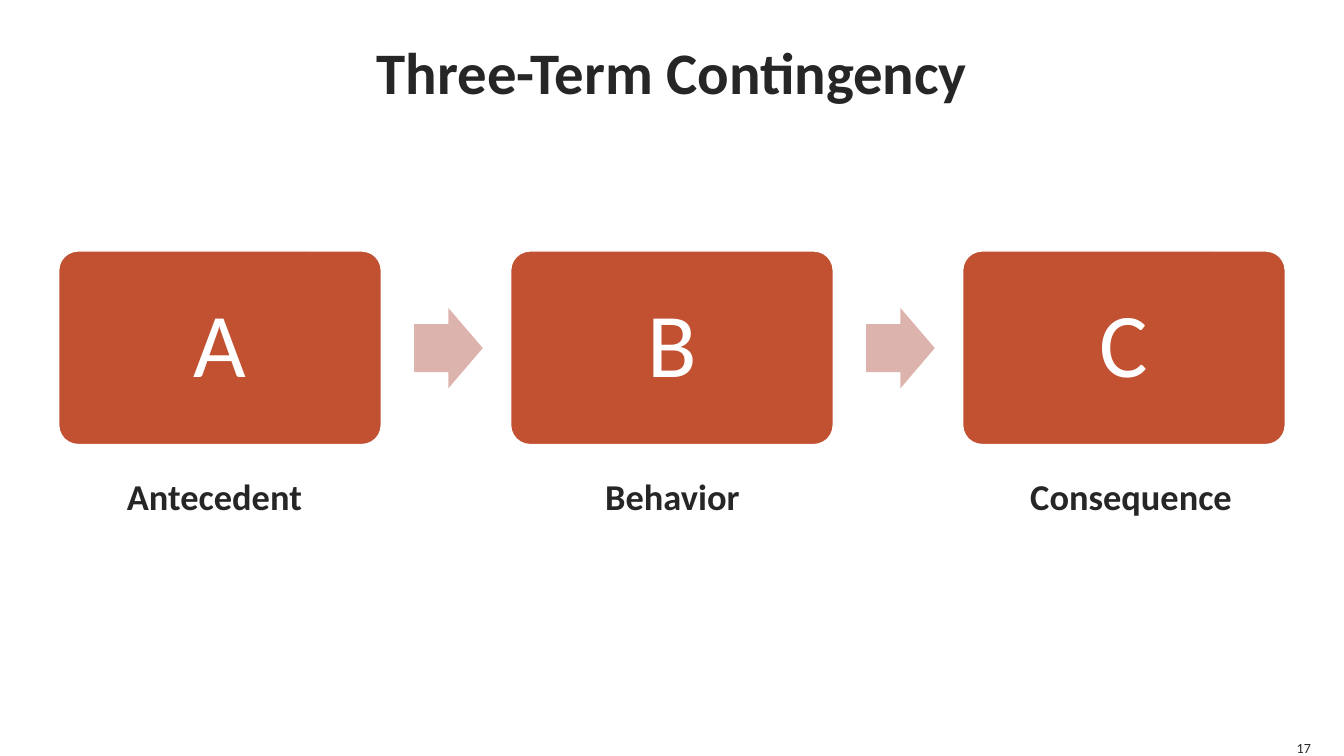
from pptx import Presentation, util as u
from pptx.dml.color import RGBColor
from pptx.enum import shapes, text

RUST = RGBColor(0xC2, 0x51, 0x31)
ROSE = RGBColor(0xDD, 0xB3, 0xAE)
INK = RGBColor(0x26, 0x26, 0x26)
WHITE = RGBColor(0xFF, 0xFF, 0xFF)
LEFT, MID, RIGHT = text.PP_ALIGN.LEFT, text.PP_ALIGN.CENTER, text.PP_ALIGN.RIGHT
TOP, CORE, BASE = (text.MSO_ANCHOR.TOP, text.MSO_ANCHOR.MIDDLE,
                   text.MSO_ANCHOR.BOTTOM)
FLUSH = dict.fromkeys(
    ("margin_left", "margin_top", "margin_right", "margin_bottom"), 0)


def apply(item, style):
    for key, value in style.items():
        setattr(item, key, value)


class Deck:
    """Build slide elements on a grid of 100 columns by 100 rows."""

    def __init__(self, wide, high):
        self.prs = Presentation()
        self.prs.slide_width, self.prs.slide_height = u.Inches(wide), u.Inches(high)
        self.slide = self.prs.slides.add_slide(self.prs.slide_layouts[5])
        self.font = {"name": "Calibri"}

    def area(self, x, y, w, h):
        col, row = self.prs.slide_width / 100, self.prs.slide_height / 100
        return [round(n) for n in (x * col, y * row, w * col, h * row)]

    def letter(self, shape, words, size, color, align=MID, bold=False, **frame):
        body = shape.text_frame
        apply(body, {"auto_size": text.MSO_AUTO_SIZE.NONE, "word_wrap": True,
                     "vertical_anchor": CORE, **frame})
        para = body.paragraphs[0]
        para.alignment = align
        run = para.add_run()
        run.text = words
        apply(run.font, {**self.font, "size": u.Pt(size), "bold": bold})
        run.font.color.rgb = color
        return para

    def title(self, words, *grid):
        shape = self.slide.shapes.title
        apply(shape, dict(zip(("left", "top", "width", "height"), self.area(*grid))))
        self.letter(shape, words, 42, INK, bold=True, **FLUSH)

    def label(self, words, grid, size, **style):
        shape = self.slide.shapes.add_textbox(*self.area(*grid))
        self.letter(shape, words, size, INK, **style)

    def shape(self, kind, grid, fill, ratios):
        shape = self.slide.shapes.add_shape(kind, *self.area(*grid))
        shape.shadow.inherit = False
        shape.fill.solid()
        shape.fill.fore_color.rgb = fill
        shape.line.fill.background()
        for spot, ratio in enumerate(ratios):
            shape.adjustments[spot] = ratio
        return shape

    def card(self, words, *grid):
        shape = self.shape(shapes.MSO_SHAPE.ROUNDED_RECTANGLE, grid, RUST, [0.1])
        shape.line.color.rgb = WHITE
        shape.line.width = u.Pt(1)
        self.letter(shape, words, 65, WHITE).line_spacing = 0.9

    def arrow(self, *grid):
        self.shape(shapes.MSO_SHAPE.RIGHT_ARROW, grid, ROSE, [0.6, 0.5])


def main():
    deck = Deck(13.33, 7.5)
    deck.title("Three-Term Contingency", 3.75, 0, 92.5, 18.67)
    terms = [("Antecedent", 8.7, 16.43, LEFT),
             ("Behavior", 43.44, 13.2, MID),
             ("Consequence", 73.89, 20.56, MID)]
    start, pitch = 4.37, 33.63
    for spot, (term, x, wide, align) in enumerate(terms):
        left = start + spot * pitch
        deck.card(term[0], left, 33.2, 24, 25.6)
        if spot < len(terms) - 1:
            deck.arrow(left + 26.45, 40.75, 5.1, 10.6)
        deck.label(term, (x, 62, wide, 7.2), 26, align=align, bold=True,
                   vertical_anchor=TOP)
    deck.label("17", (96.25, 97.73, 1.28, 2.27), 10, align=RIGHT,
               vertical_anchor=BASE, **{**FLUSH, "word_wrap": False})
    deck.prs.save("out.pptx")


if __name__ == "__main__":
    main()
